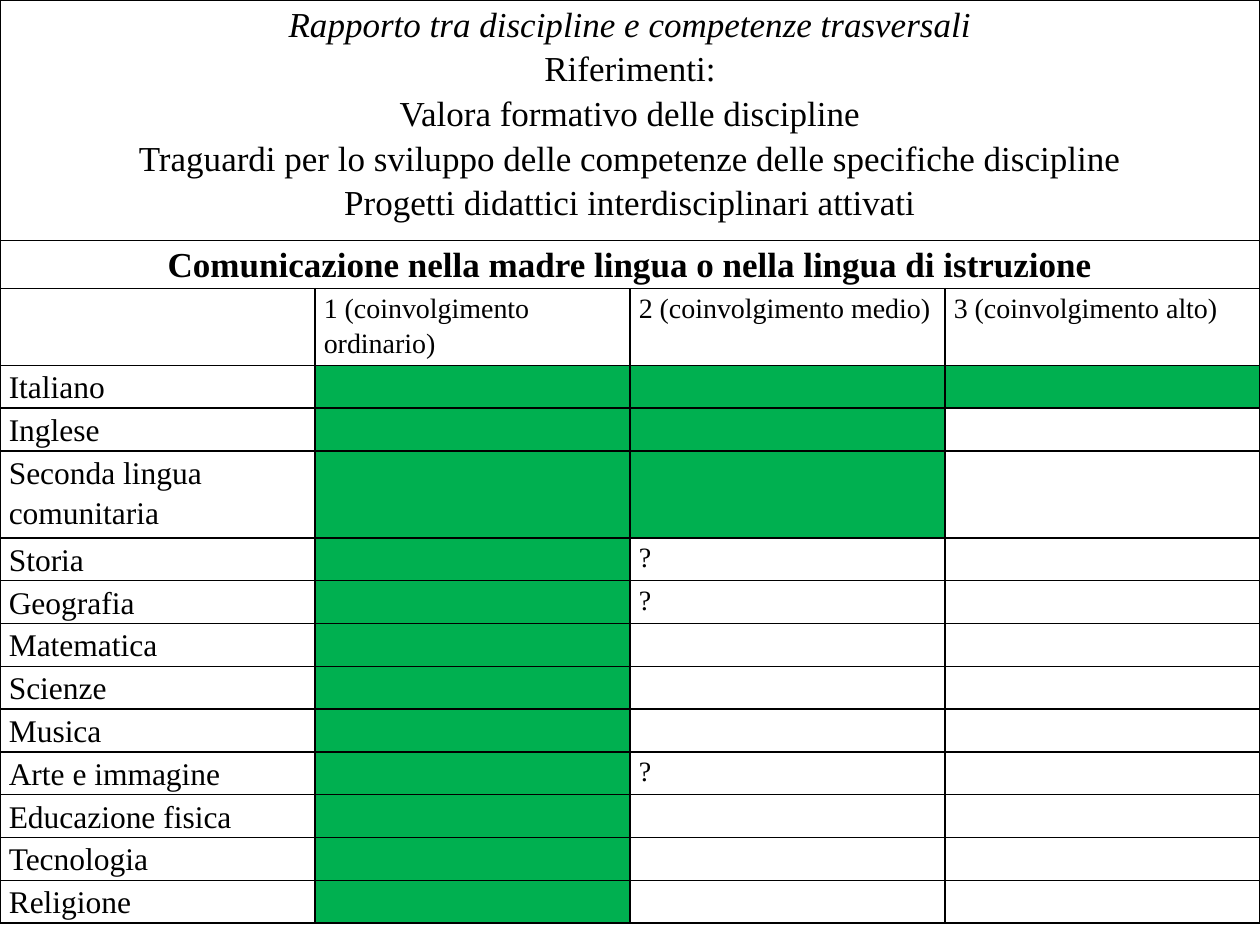
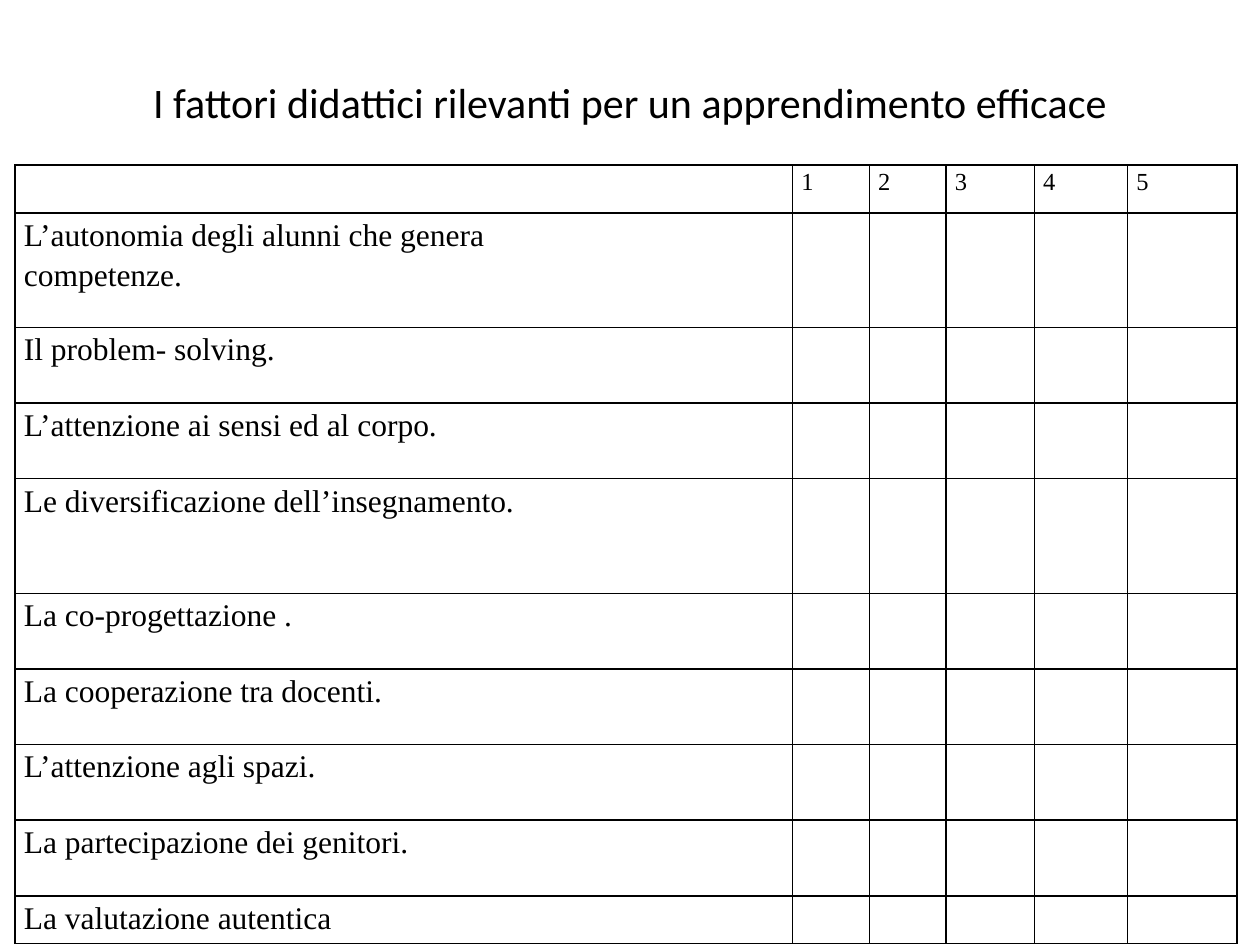
from dataclasses import dataclass

from lxml.etree import SubElement
from pptx import Presentation
from pptx.dml.color import RGBColor
from pptx.enum.text import MSO_ANCHOR, PP_ALIGN
from pptx.oxml.ns import qn
from pptx.util import Inches, Pt


@dataclass(frozen=True)
class Theme:
    ink: str = "000000"
    paper: str = "FFFFFF"
    level: str = "00B050"
    title_font: str = "Calibri"
    table_font: str = "Times New Roman"
    title: int = 24
    heading: int = 20
    label: int = 18
    note: int = 16
    scale: int = 14
    line_spacing: float = 1.15
    border: int = 1
    cell_margin: float = 0.07


THEME = Theme()

# Slide 1 content
REFERENCES = [
    "Rapporto tra discipline e competenze trasversali",
    "Riferimenti:",
    "Valora formativo delle discipline",
    "Traguardi per lo sviluppo delle competenze delle specifiche discipline",
    "Progetti didattici interdisciplinari attivati",
]
COMPETENCE = "Comunicazione nella madre lingua o nella lingua di istruzione"
LEVELS = ["1 (coinvolgimento ordinario)", "2 (coinvolgimento medio)",
          "3 (coinvolgimento alto)"]
# Subject, involvement level, mark shown in the next level
SUBJECTS = [
    ("Italiano", 3, ""),
    ("Inglese", 2, ""),
    ("Seconda lingua comunitaria", 2, ""),
    ("Storia", 1, "?"),
    ("Geografia", 1, "?"),
    ("Matematica", 1, ""),
    ("Scienze", 1, ""),
    ("Musica", 1, ""),
    ("Arte e immagine", 1, "?"),
    ("Educazione fisica", 1, ""),
    ("Tecnologia", 1, ""),
    ("Religione", 1, ""),
]
TWO_LINE_SUBJECT = "Seconda lingua comunitaria"

# Slide 2 content
FACTORS_TITLE = "I fattori didattici rilevanti per un apprendimento efficace"
SCORES = ["1", "2", "3", "4", "5"]
# Factor lines, row height
FACTORS = [
    (["L’autonomia degli alunni che genera", "competenze."], 0.91),
    (["Il problem- solving."], 0.6),
    (["L’attenzione ai sensi ed al corpo."], 0.6),
    (["Le diversificazione dell’insegnamento."], 0.91),
    (["La co-progettazione ."], 0.6),
    (["La cooperazione tra docenti."], 0.6),
    (["L’attenzione agli spazi."], 0.6),
    (["La partecipazione dei genitori."], 0.6),
    (["La valutazione autentica"], 0.38),
]


def set_font(p, name, size, bold=False, italic=False):
    p.font.name = name
    p.font.size = Pt(size)
    p.font.bold = bold
    p.font.italic = italic
    p.font.color.rgb = RGBColor.from_string(THEME.ink)


def set_borders(cell):
    tc_pr = cell._tc.get_or_add_tcPr()
    for i, side in enumerate(("lnL", "lnR", "lnT", "lnB")):
        ln = tc_pr.makeelement(qn(f"a:{side}"), {"w": str(Pt(THEME.border))})
        fill = SubElement(ln, qn("a:solidFill"))
        SubElement(fill, qn("a:srgbClr"), val=THEME.ink)
        tc_pr.insert(i, ln)  # borders come before the cell fill


def fill_cell(cell, color):
    cell.fill.solid()
    cell.fill.fore_color.rgb = RGBColor.from_string(color)


def write(cell, lines, size, bold=False, align=PP_ALIGN.LEFT):
    tf = cell.text_frame
    tf.text = "\n".join(lines)
    for p in tf.paragraphs:
        p.alignment = align
        p.line_spacing = THEME.line_spacing
        set_font(p, THEME.table_font, size, bold)


def add_grid(slide, left, top, widths, heights):
    """Add a plain white table with thin black borders."""
    table = slide.shapes.add_table(
        len(heights), len(widths), Inches(left), Inches(top),
        Inches(sum(widths)), Inches(sum(heights))).table
    table.first_row = table.horz_banding = False
    for col, width in zip(table.columns, widths):
        col.width = Inches(width)
    for row, height in zip(table.rows, heights):
        row.height = Inches(height)
    for cell in table.iter_cells():
        cell.margin_left = cell.margin_right = Inches(THEME.cell_margin)
        cell.margin_top = cell.margin_bottom = 0
        fill_cell(cell, THEME.paper)
        set_borders(cell)
    return table


def build_subjects(prs):
    slide = prs.slides.add_slide(prs.slide_layouts[6])
    row_heights = [0.69 if name == TWO_LINE_SUBJECT else 0.34
                   for name, _, _ in SUBJECTS]
    table = add_grid(slide, 0, 0, [2.5] * 4, [1.91, 0.38, 0.61] + row_heights)

    # Full-width headings
    for row, lines, bold in ((0, REFERENCES, False), (1, [COMPETENCE], True)):
        cell = table.cell(row, 0)
        cell.merge(table.cell(row, len(LEVELS)))
        write(cell, lines, THEME.heading, bold, PP_ALIGN.CENTER)
    table.cell(0, 0).text_frame.paragraphs[0].font.italic = True

    # Levels and the bar for each subject
    for col, level in enumerate(LEVELS, 1):
        write(table.cell(2, col), [level], THEME.note)
    for row, (name, level, mark) in enumerate(SUBJECTS, 3):
        write(table.cell(row, 0), [name], THEME.label)
        for col in range(1, level + 1):
            fill_cell(table.cell(row, col), THEME.level)
        if mark:
            write(table.cell(row, level + 1), [mark], THEME.note)


def build_factors(prs):
    slide = prs.slides.add_slide(prs.slide_layouts[5])

    # Title
    title = slide.shapes.title
    title.left, title.top = Inches(0.5), Inches(0.3)
    title.width, title.height = Inches(9), Inches(1.01)
    tf = title.text_frame
    tf.text = FACTORS_TITLE
    tf.vertical_anchor = MSO_ANCHOR.MIDDLE
    p = tf.paragraphs[0]
    p.alignment = PP_ALIGN.CENTER
    set_font(p, THEME.title_font, THEME.title)

    # Rating grid
    table = add_grid(slide, 0.12, 1.31, [6.17, 0.61, 0.61, 0.7, 0.74, 0.87],
                     [0.38] + [height for _, height in FACTORS])
    for col, score in enumerate(SCORES, 1):
        write(table.cell(0, col), [score], THEME.scale)
    for row, (lines, _) in enumerate(FACTORS, 1):
        write(table.cell(row, 0), lines, THEME.label)


def main():
    prs = Presentation()
    prs.slide_width, prs.slide_height = Inches(10), Inches(7.5)
    build_subjects(prs)
    build_factors(prs)
    prs.save("out.pptx")


if __name__ == "__main__":
    main()
